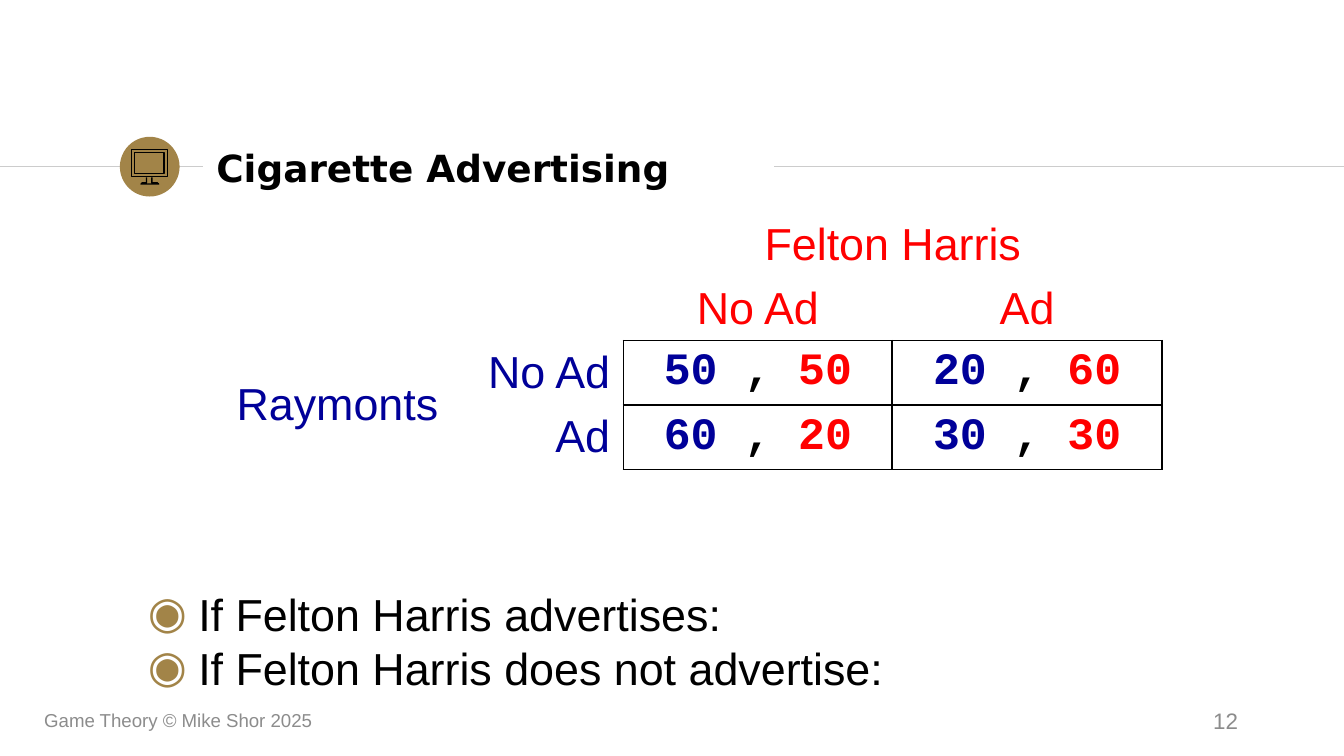
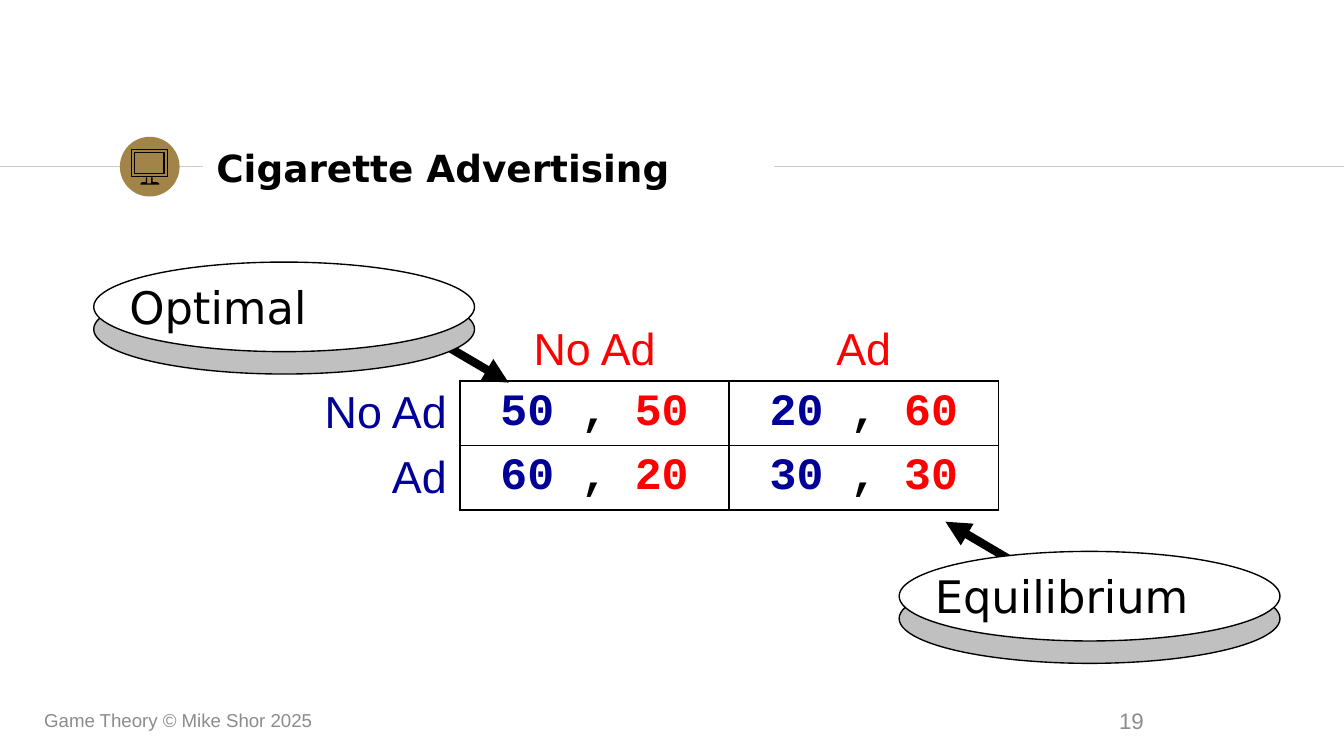
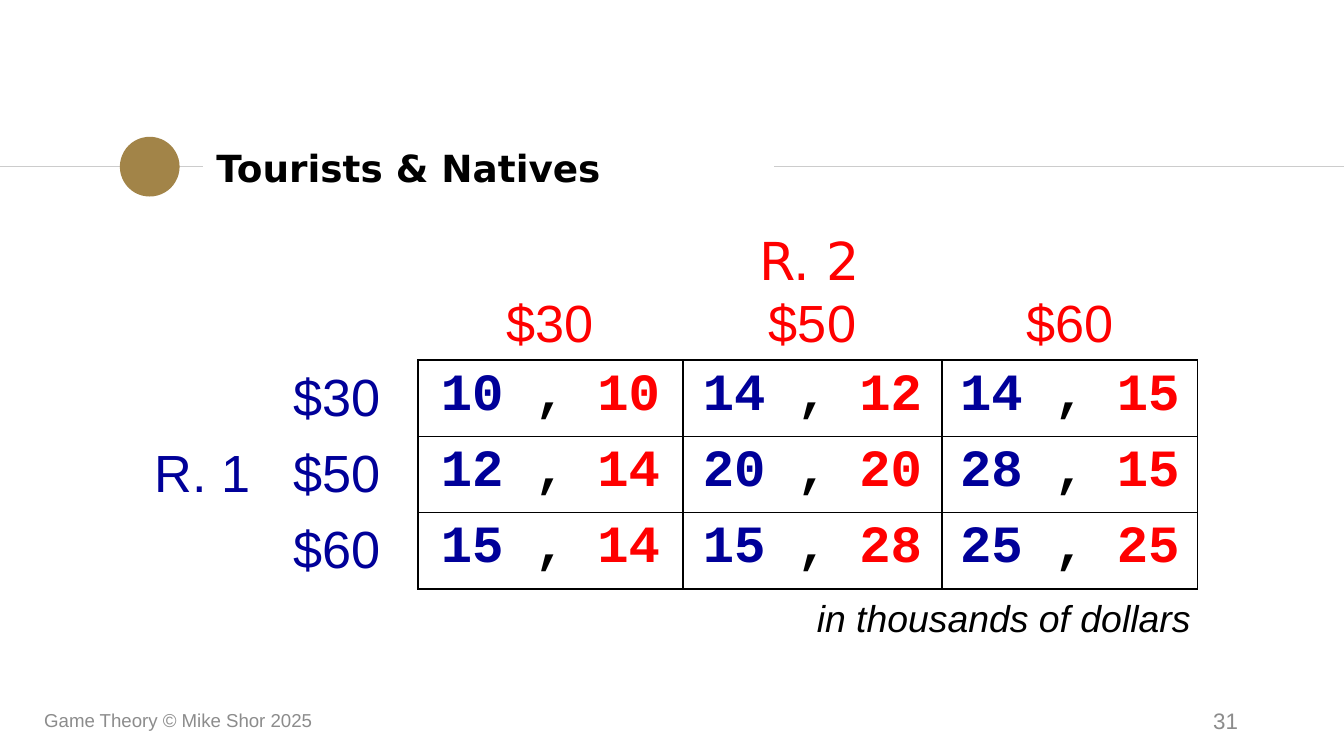
from dataclasses import dataclass

from lxml import etree
from pptx import Presentation
from pptx.dml.color import RGBColor
from pptx.enum import shapes, text
from pptx.oxml import ns
from pptx.util import Pt

COLORS = {"gold": "A28448", "rule": "CCCCCC", "gray": "8C8C8C", "shade": "C0C0C0",
          "black": "000000", "white": "FFFFFF", "row": "000099", "col": "FF0000"}
SANS, MONO, TITLE = "Arial", "Courier New", "DejaVu Sans"
NO_STYLE = "{2D5ABB26-0587-4C30-8999-92F81FD0307C}"
LEFT, CENTER, RIGHT = text.PP_ALIGN.LEFT, text.PP_ALIGN.CENTER, text.PP_ALIGN.RIGHT
TOP, MIDDLE, BOTTOM = (text.MSO_ANCHOR.TOP, text.MSO_ANCHOR.MIDDLE,
                       text.MSO_ANCHOR.BOTTOM)
TITLE_AND_BODY, TITLE_ONLY = 1, 5
RULE_Y = 89.3


@dataclass
class Game:
    """A payoff matrix: the row player's moves at the left, the column player's on top."""
    left: float
    top: float
    cols: list[float]
    row_height: float
    size: float
    moves: list[str]
    payoffs: list[list[tuple[int, int]]]
    row_player: str = ""
    col_player: str = ""
    side_align: text.PP_ALIGN = RIGHT


@dataclass
class Callout:
    label: str
    left: float
    top: float
    arrow: tuple[float, float, float, float]


def rgb(name: str) -> RGBColor:
    return RGBColor.from_string(COLORS[name])


def sub(parent, tag: str, **attrs):
    return etree.SubElement(parent, ns.qn(tag), **attrs)


def write(p, content: str, *, size: float, font: str = SANS, color: str = "black",
          bold: bool = False, italic: bool = False, align=LEFT) -> None:
    """Append one formatted run to a paragraph."""
    p.alignment = align
    r = p.add_run()
    r.text = content
    r.font.size, r.font.name = Pt(size), font
    r.font.bold, r.font.italic = bold, italic
    r.font.color.rgb = rgb(color)


def place(sp, left: float, top: float, width: float, height: float) -> None:
    sp.left, sp.top, sp.width, sp.height = map(Pt, (left, top, width, height))


def set_frame(tf, anchor=TOP, inset_y: float = 3.6) -> None:
    tf.word_wrap = True
    tf.auto_size = text.MSO_AUTO_SIZE.NONE
    tf.vertical_anchor = anchor
    tf.margin_left = tf.margin_right = Pt(7.2)
    tf.margin_top = tf.margin_bottom = Pt(inset_y)


def add_label(s, content: str, left: float, top: float, width: float, height: float,
              anchor=TOP, **fmt) -> None:
    tf = s.shapes.add_textbox(*map(Pt, (left, top, width, height))).text_frame
    set_frame(tf, anchor)
    write(tf.paragraphs[0], content, **fmt)


def add_line(s, x1: float, y1: float, x2: float, y2: float, color: str,
             width: float, arrow: bool = False) -> None:
    sp = s.shapes.add_connector(shapes.MSO_CONNECTOR.STRAIGHT,
                                *map(Pt, (x1, y1, x2, y2)))
    sp.line.color.rgb, sp.line.width = rgb(color), Pt(width)
    if arrow:
        sub(sp.line._get_or_add_ln(), "a:tailEnd", type="triangle")
    sub(sp._element.spPr, "a:effectLst")


def add_ellipse(s, left: float, top: float, width: float, height: float,
                fill: str, line: str = "") -> None:
    sp = s.shapes.add_shape(shapes.MSO_SHAPE.OVAL, *map(Pt, (left, top, width, height)))
    sp.shadow.inherit = False
    sp.fill.solid()
    sp.fill.fore_color.rgb = rgb(fill)
    if line:
        sp.line.color.rgb, sp.line.width = rgb(line), Pt(0.75)
    else:
        sp.line.fill.background()


def add_outline(s, *contours: list[tuple[float, float]], close: bool) -> None:
    """Draw unfilled black contours as one freeform."""
    first, *others = [[(Pt(x), Pt(y)) for x, y in c] for c in contours]
    builder = s.shapes.build_freeform(*first[0])
    builder.add_line_segments(first[1:], close=close)
    for c in others:
        builder.move_to(*c[0])
        builder.add_line_segments(c[1:], close=close)
    sp = builder.convert_to_shape()
    sp.shadow.inherit = False
    sp.fill.background()
    sp.line.color.rgb, sp.line.width = rgb("black"), Pt(0.75)


def box(x1: float, y1: float, x2: float, y2: float) -> list[tuple[float, float]]:
    return [(x1, y1), (x2, y1), (x2, y2), (x1, y2)]


def add_monitor(s) -> None:
    add_outline(s, [(78.5, 95), (78.5, 97.9), (76.3, 97.9), (75.6, 98.6),
                    (85, 98.6), (84.2, 97.9), (81.4, 97.9), (81.4, 95)], close=False)
    add_outline(s, box(70.6, 80, 89.6, 94.6), box(72, 81.8, 87.8, 93), close=True)


def add_slide(prs, layout: int, title: str, number: int, number_left: float = 508.3):
    """Add a slide with the shared title, rules, badge and footer."""
    s = prs.slides.add_slide(prs.slide_layouts[layout])
    add_line(s, 0, RULE_Y, 108.7, RULE_Y, "rule", 0.75)
    add_line(s, 414.7, RULE_Y, 720, RULE_Y, "rule", 0.75)
    add_ellipse(s, 64.2, RULE_Y - 16, 32, 32, "gold")
    place(s.shapes.title, 108.7, 72.7, 305.3, 34.6)
    tf = s.shapes.title.text_frame
    set_frame(tf, MIDDLE, 7.2)
    write(tf.paragraphs[0], title, size=20, font=TITLE, bold=True)
    add_label(s, "Game Theory © Mike Shor 2025", 16.6, 375.1, 243.4, 21.6,
              MIDDLE, size=10, color="gray")
    add_label(s, str(number), number_left, 375.1, 162, 21.6,
              MIDDLE, size=12, color="gray", align=RIGHT)
    return s


def add_bullets(s, items: list[str]) -> None:
    sp = s.placeholders[1]
    place(sp, 72, 312.5, 612, 80)
    tf = sp.text_frame
    set_frame(tf, inset_y=7.2)
    for i, item in enumerate(items):
        p = tf.add_paragraph() if i else tf.paragraphs[0]
        write(p, item, size=24)
        p.line_spacing, p.space_before = 0.8, Pt(6)
        pPr = p._p.get_or_add_pPr()
        pPr.set("marL", str(Pt(27)))
        pPr.set("indent", str(-Pt(27)))
        sub(sub(pPr, "a:buClr"), "a:srgbClr", val=COLORS["gold"])
        sub(pPr, "a:buChar", char="◉")


def set_borders(cell, sides: str) -> None:
    """Give a cell black borders on the sides named by letters of LRTB, in that order."""
    tcPr = cell._tc.get_or_add_tcPr()
    for i, side in enumerate(sides):
        ln = etree.Element(ns.qn(f"a:ln{side}"), w=str(Pt(1)))
        sub(sub(ln, "a:solidFill"), "a:srgbClr", val=COLORS["black"])
        tcPr.insert(i, ln)


def add_game(s, game: Game) -> None:
    n = len(game.moves)
    c0, r0 = len(game.cols) - n, 2 if game.col_player else 1
    t = s.shapes.add_table(r0 + n, len(game.cols), Pt(game.left), Pt(game.top),
                           Pt(sum(game.cols)), Pt(game.row_height * (r0 + n))).table
    t.first_row = t.horz_banding = False
    t._tbl.tblPr[0].text = NO_STYLE
    for column, width in zip(t.columns, game.cols):
        column.width = Pt(width)
    for cell in t.iter_cells():
        cell.fill.background()

    def fill_cell(row: int, col: int, content: str, color: str, align, anchor):
        cell = t.cell(row, col)
        cell.vertical_anchor = anchor
        write(cell.text_frame.paragraphs[0], content, size=game.size,
              color=color, align=align)
        return cell

    if game.col_player:
        t.cell(0, c0).merge(t.cell(0, c0 + n - 1))
        fill_cell(0, c0, game.col_player, "col", CENTER, BOTTOM)
    if game.row_player:
        t.cell(r0, 0).merge(t.cell(r0 + n - 1, 0))
        fill_cell(r0, 0, game.row_player, "row", LEFT, MIDDLE)
    for i, move in enumerate(game.moves):
        set_borders(fill_cell(r0 - 1, c0 + i, move, "col", CENTER, BOTTOM), "B")
        set_borders(fill_cell(r0 + i, c0 - 1, move, "row", game.side_align, MIDDLE), "R")
        for j, (mine, theirs) in enumerate(game.payoffs[i]):
            cell = t.cell(r0 + i, c0 + j)
            set_borders(cell, "LRTB")
            for part, color in ((mine, "row"), (" , ", "black"), (theirs, "col")):
                write(cell.text_frame.paragraphs[0], str(part), size=game.size,
                      font=MONO, color=color, bold=True, align=CENTER)


def add_callout(s, c: Callout) -> None:
    add_line(s, *c.arrow, "black", 4.5, arrow=True)
    for drop, fill in ((12, "shade"), (0, "white")):
        add_ellipse(s, c.left, c.top + drop, 204, 48, fill, "black")
    add_label(s, c.label, c.left + 12, c.top + 6, 180, 36, size=24, font=TITLE)


def main() -> None:
    prs = Presentation()
    prs.slide_width, prs.slide_height = Pt(720), Pt(405)

    ad_moves = ["No Ad", "Ad"]
    ad_payoffs = [[(50, 50), (20, 60)], [(60, 20), (30, 30)]]
    ad_cols = [88.5, 144, 144.5]

    s = add_slide(prs, TITLE_AND_BODY, "Cigarette Advertising", 12)
    add_monitor(s)
    add_game(s, Game(119.5, 113.5, [126, *ad_cols], 34.5, 24, ad_moves, ad_payoffs,
                     row_player="Raymonts", col_player="Felton Harris"))
    add_bullets(s, ["If Felton Harris advertises:",
                    "If Felton Harris does not advertise:"])

    s = add_slide(prs, TITLE_ONLY, "Cigarette Advertising", 19, number_left=457.9)
    add_monitor(s)
    add_game(s, Game(158, 169.7, ad_cols, 34.5, 24, ad_moves, ad_payoffs))
    for c in (Callout("Equilibrium", 481.7, 295.4, (551.5, 306, 506.5, 279.5)),
              Callout("Optimal", 50.2, 140.4, (227.5, 178.5, 272.5, 205))):
        add_callout(s, c)

    s = add_slide(prs, TITLE_ONLY, "Tourists & Natives", 31)
    add_game(s, Game(75.6, 152, [74.2, 74.2, 141.8, 139, 136.8], 40.9, 28,
                     ["$30", "$50", "$60"],
                     [[(10, 10), (14, 12), (14, 15)],
                      [(12, 14), (20, 20), (28, 15)],
                      [(15, 14), (15, 28), (25, 25)]],
                     row_player="R. 1", side_align=LEFT))
    add_label(s, "R. 2", 335.5, 118.8, 196.5, 41, size=28, font=TITLE,
              color="col", align=CENTER)
    add_label(s, "in thousands of dollars", 430.5, 315.4, 224, 39.6, size=20, italic=True)

    prs.save("out.pptx")


if __name__ == "__main__":
    main()
